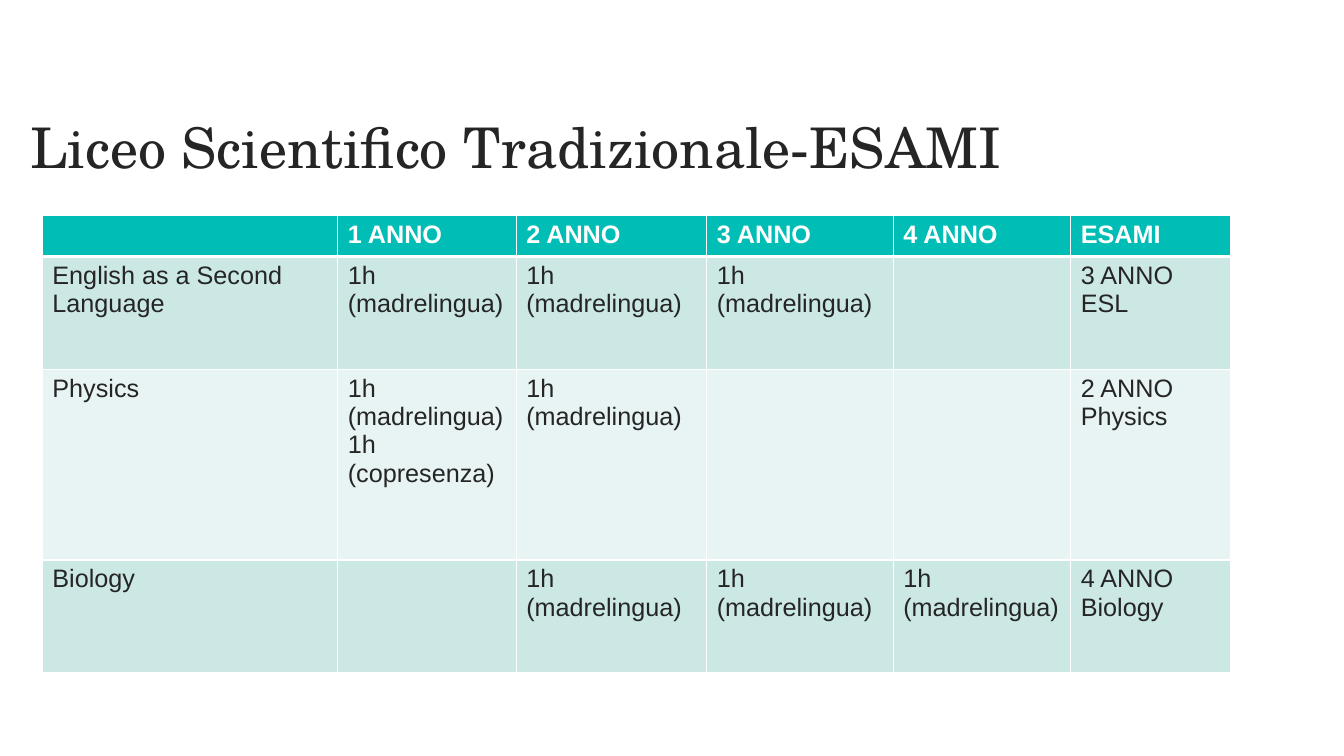
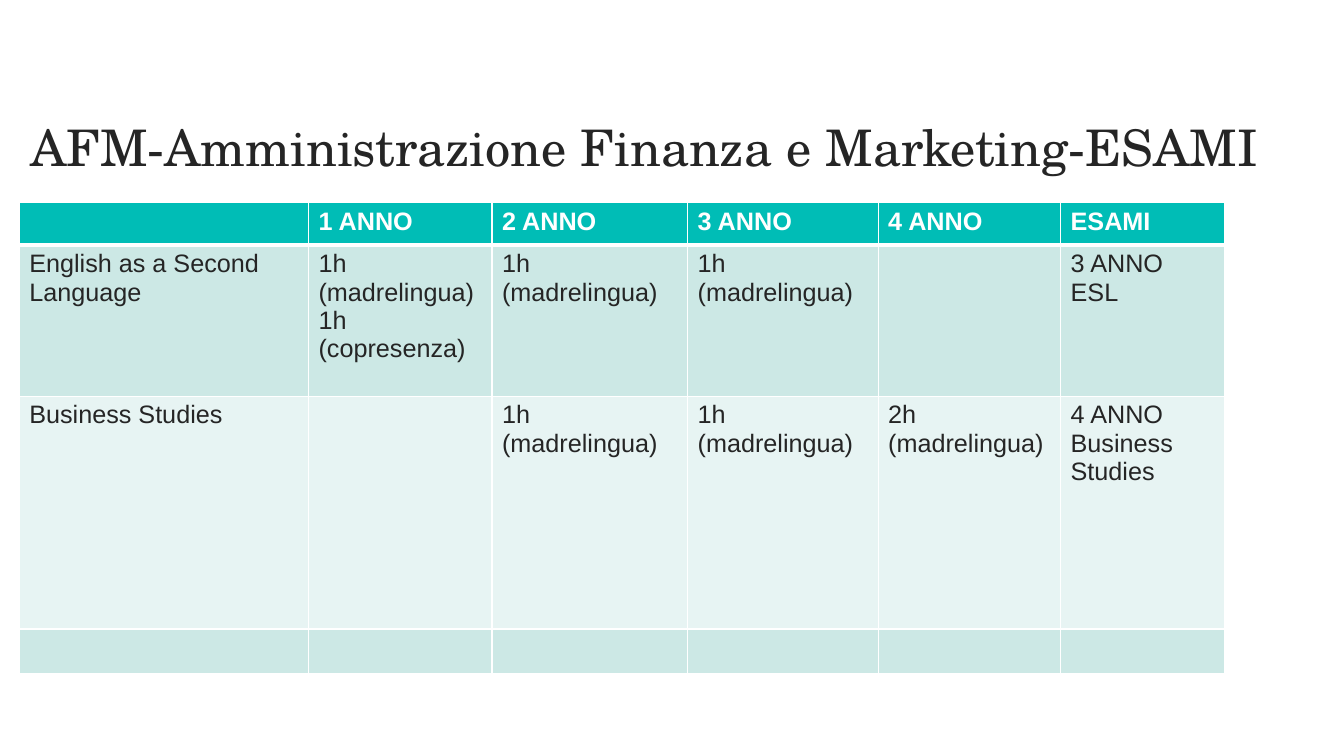
from dataclasses import dataclass

from pptx import Presentation
from pptx.dml.color import RGBColor as RGB
from pptx.enum.text import MSO_ANCHOR as Anchor, MSO_AUTO_SIZE as AutoSize, PP_ALIGN as Align
from pptx.oxml import parse_xml
from pptx.oxml.ns import nsdecls
from pptx.util import Inches, Pt


@dataclass(frozen=True)
class Theme:
    title_font: str = "TeX Gyre Schola"
    body_font: str = "Arial"
    body_size: int = 18
    ink: str = "252525"
    white: str = "FFFFFF"
    header: str = "00BDB6"
    bands: tuple = ("CCE8E5", "E7F4F3")
    rule: int = 1
    header_rule: int = 3


T = Theme()
TITLE_BOX = (0.2, 1.1, 12.72, 0.79)
HEADER = ["", "1 ANNO", "2 ANNO", "3 ANNO", "4 ANNO", "ESAMI"]
ONE = "1h (madrelingua)"
TWO = "2h (madrelingua)"
SHARED = ONE + "\n1h (copresenza)"
ESL = "English as a Second Language"

# Each slide: title, title size, table corner, column widths, row heights, body rows
SLIDES = [
    dict(
        title="Liceo Scientifico Tradizionale-ESAMI", size=40, corner=(0.42, 2.14),
        widths=[2.93, 1.77, 1.89, 1.85, 1.76, 1.59], heights=[0.37, 1.12, 1.89, 1.12],
        rows=[
            [ESL, ONE, ONE, ONE, "", "3 ANNO\nESL"],
            ["Physics", SHARED, ONE, "", "", "2 ANNO\nPhysics"],
            ["Biology", "", ONE, ONE, ONE, "4 ANNO\nBiology"],
        ],
    ),
    dict(
        title="AFM-Amministrazione Finanza e Marketing-ESAMI", size=36, corner=(0.19, 2.01),
        widths=[2.87, 1.82, 1.94, 1.89, 1.81, 1.63], heights=[0.42, 1.5, 2.31, 0.44],
        rows=[
            [ESL, SHARED, ONE, ONE, "", "3 ANNO\nESL"],
            ["Business Studies", "", ONE, ONE, TWO, "4 ANNO\nBusiness Studies"],
            [""] * len(HEADER),
        ],
    ),
]


def style(font, color, **values):
    font.color.rgb = RGB.from_string(color)
    for name, value in values.items():
        setattr(font, name, value)


def add_title(s, text, size, box):
    sp = s.shapes.title
    for name, value in zip(("left", "top", "width", "height"), box):
        setattr(sp, name, Inches(value))
    tf = sp.text_frame
    frame = dict(text=text, word_wrap=True, auto_size=AutoSize.NONE, vertical_anchor=Anchor.MIDDLE)
    for name, value in frame.items():
        setattr(tf, name, value)
    p = tf.paragraphs[0]
    p.alignment, p.line_spacing = Align.LEFT, 0.9
    style(p.runs[0].font, T.ink, name=T.title_font, size=Pt(size))


def add_borders(cell, widths):
    """Draw the given sides; widths maps L, R, T, B (in that order) to points."""
    tc_pr = cell._tc.get_or_add_tcPr()
    for side, width in widths.items():
        tc_pr.append(parse_xml(
            f'<a:ln{side} {nsdecls("a")} w="{Pt(width)}"><a:solidFill>'
            f'<a:srgbClr val="{T.white}"/></a:solidFill></a:ln{side}>'))


def fill_cell(cell, text, row):
    is_header = row == 0
    # Inner horizontal rules belong to the row above
    sides = dict(L=T.rule, R=T.rule)
    if is_header:
        sides["T"] = T.rule
    sides["B"] = T.header_rule if is_header else T.rule
    add_borders(cell, sides)
    cell.fill.solid()
    back = T.header if is_header else T.bands[(row - 1) % len(T.bands)]
    cell.fill.fore_color.rgb = RGB.from_string(back)
    # Text
    cell.text = text
    for p in cell.text_frame.paragraphs:
        for r in p.runs:
            style(r.font, T.white if is_header else T.ink,
                  name=T.body_font, size=Pt(T.body_size), bold=is_header)


def add_timetable(s, corner, widths, heights, rows):
    box = (*corner, sum(widths), sum(heights))
    table = s.shapes.add_table(len(heights), len(widths), *map(Inches, box)).table
    table.horz_banding = False
    for column, width in zip(table.columns, widths):
        column.width = Inches(width)
    for row, height in zip(table.rows, heights):
        row.height = Inches(height)
    for i, texts in enumerate([HEADER, *rows]):
        for j, text in enumerate(texts):
            fill_cell(table.cell(i, j), text, i)


def add_course_slide(prs, title, size, **timetable):
    s = prs.slides.add_slide(prs.slide_layouts.get_by_name("Title Only"))
    add_title(s, title, size, TITLE_BOX)
    add_timetable(s, **timetable)


def main():
    prs = Presentation()
    prs.slide_width, prs.slide_height = Inches(13.33), Inches(7.5)
    for course in SLIDES:
        add_course_slide(prs, **course)
    prs.save("out.pptx")


if __name__ == "__main__":
    main()
